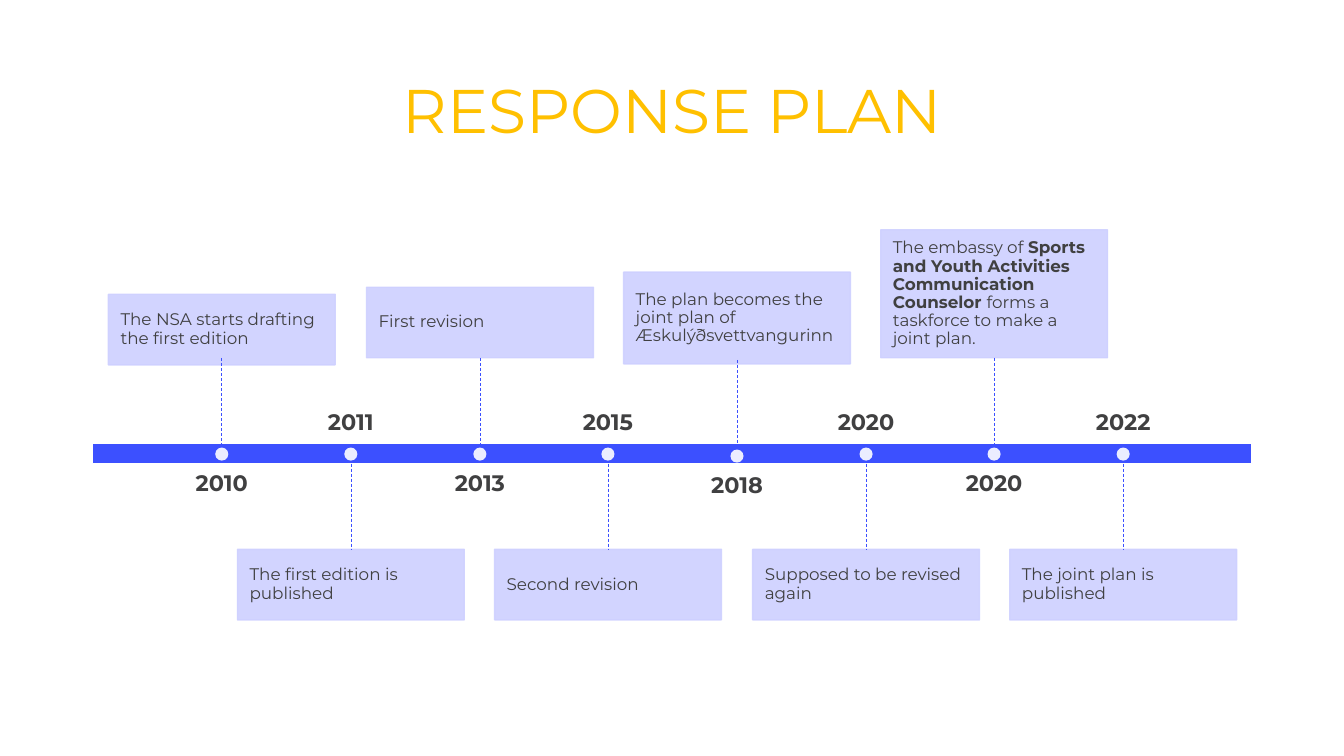
from lxml.etree import SubElement
from pptx import Presentation
from pptx.dml.color import RGBColor
from pptx.enum.dml import MSO_LINE
from pptx.enum.shapes import MSO_CONNECTOR, MSO_SHAPE
from pptx.enum.text import MSO_ANCHOR, PP_ALIGN
from pptx.oxml.ns import qn
from pptx.util import Pt

SCALE = 9144  # 100 px to the inch
FONT = "Montserrat"
COLORS = {"title": "FFC000", "bar": "3C50FF", "card": "CED0FF",
          "text": "404041", "white": "FFFFFF"}
STEP = 127.75
CARD_W, YEAR_W, DOT = 225, 204, 13

# Year, text parts (every second one bold), card top, card height, drop
EVENTS = [
    ("2010", ["The NSA starts drafting the first edition"], 292, 70, 0),
    ("2011", ["The first edition is published"], 545, 70, 0),
    ("2013", ["First revision"], 285, 70, 0),
    ("2015", ["Second revision"], 545, 70, 0),
    ("2018", ["The plan becomes the joint plan of Æskulýðsvettvangurinn"],
     270, 91, 2),
    ("2020", ["Supposed to be revised again"], 545, 70, 0),
    ("2020", ["The embassy of ",
              "Sports and Youth Activities Communication Counselor ",
              "forms a taskforce to make a joint plan."], 228, 127, 0),
    ("2022", ["The joint plan is published"], 545, 70, 0),
]


def px(*nums):
    return [round(n * SCALE) for n in nums]


def color(name):
    return RGBColor.from_string(COLORS[name])


def fade(fill):
    """Make a solid fill 90 % opaque."""
    tag = fill._xPr.find(qn("a:solidFill"))[0]
    SubElement(tag, qn("a:alpha"), val="90000")


def style(para, size, name="text", align=PP_ALIGN.LEFT):
    para.alignment = align
    para.line_spacing = 0.9
    for run in para.runs:
        run.font.size = Pt(size)
        run.font.name = FONT
        run.font.color.rgb = color(name)


def setup(frame, inset, anchor):
    frame.word_wrap = True
    frame.vertical_anchor = anchor
    (frame.margin_left, frame.margin_top,
     frame.margin_right, frame.margin_bottom) = px(*[inset] * 4)


def block(slide, kind, box, fill, edge=None, clear=False):
    shape = slide.shapes.add_shape(kind, *px(*box))
    shape.shadow.inherit = False
    shape.fill.solid()
    shape.fill.fore_color.rgb = color(fill)
    if edge:
        shape.line.width = Pt(1)
        shape.line.color.rgb = color(edge)
    else:
        shape.line.fill.background()
    if clear:
        fade(shape.fill)
        if edge:
            fade(shape.line.fill)
    return shape


def add_title(slide, box):
    title = slide.shapes.title
    title.left, title.top, title.width, title.height = px(*box)
    title.text_frame.text = "RESPONSE PLAN"
    title.text_frame.vertical_anchor = MSO_ANCHOR.MIDDLE
    style(title.text_frame.paragraphs[0], 44, "title", PP_ALIGN.CENTER)


def add_card(slide, box, parts):
    card = block(slide, MSO_SHAPE.RECTANGLE, box, "card", "card", True)
    setup(card.text_frame, 12, MSO_ANCHOR.MIDDLE)
    para = card.text_frame.paragraphs[0]
    for i, part in enumerate(parts):
        run = para.add_run()
        run.text = part
        run.font.bold = i % 2 == 1
    style(para, 12)


def add_year(slide, box, year, anchor):
    label = slide.shapes.add_textbox(*px(*box))
    setup(label.text_frame, 0, anchor)
    label.text_frame.text = year
    para = label.text_frame.paragraphs[0]
    style(para, 16, align=PP_ALIGN.CENTER)
    para.runs[0].font.bold = True


def add_stem(slide, x, top, end):
    stem = slide.shapes.add_connector(MSO_CONNECTOR.STRAIGHT,
                                      *px(x, top, x, end))
    stem.line.color.rgb = color("bar")
    stem.line.width = Pt(0.5)
    stem.line.dash_style = MSO_LINE.DASH
    SubElement(stem._element.spPr, qn("a:effectLst"))


def add_event(slide, bar, i, event):
    year, parts, top, high, drop = event
    left, y, _, thick = bar
    x = left + 128 + round(STEP * i)
    add_card(slide, (x - CARD_W / 2, top, CARD_W, high), parts)
    # Cards alternate above and below the bar, years on the other side
    if i % 2 == 0:
        add_stem(slide, x, y - 85 + drop, y + drop)
        add_year(slide, (x - YEAR_W / 2, y + thick + 8 + drop, YEAR_W, 57),
                 year, MSO_ANCHOR.TOP)
    else:
        add_stem(slide, x, y + thick, top)
        add_year(slide, (x - YEAR_W / 2, y - 65, YEAR_W, 57),
                 year, MSO_ANCHOR.BOTTOM)
    block(slide, MSO_SHAPE.OVAL,
          (x - DOT / 2, y + 4 + drop, DOT, DOT), "white", clear=True)


def add_timeline(slide, bar):
    block(slide, MSO_SHAPE.RECTANGLE, bar, "bar", "white")
    for i, event in enumerate(EVENTS):
        add_event(slide, bar, i, event)


def main():
    deck = Presentation()
    deck.slide_width, deck.slide_height = px(1333, 750)
    slide = deck.slides.add_slide(deck.slide_layouts[5])
    add_title(slide, (92, 40, 1150, 145))
    add_timeline(slide, (92, 440, 1150, 20))
    deck.save("out.pptx")


if __name__ == "__main__":
    main()
